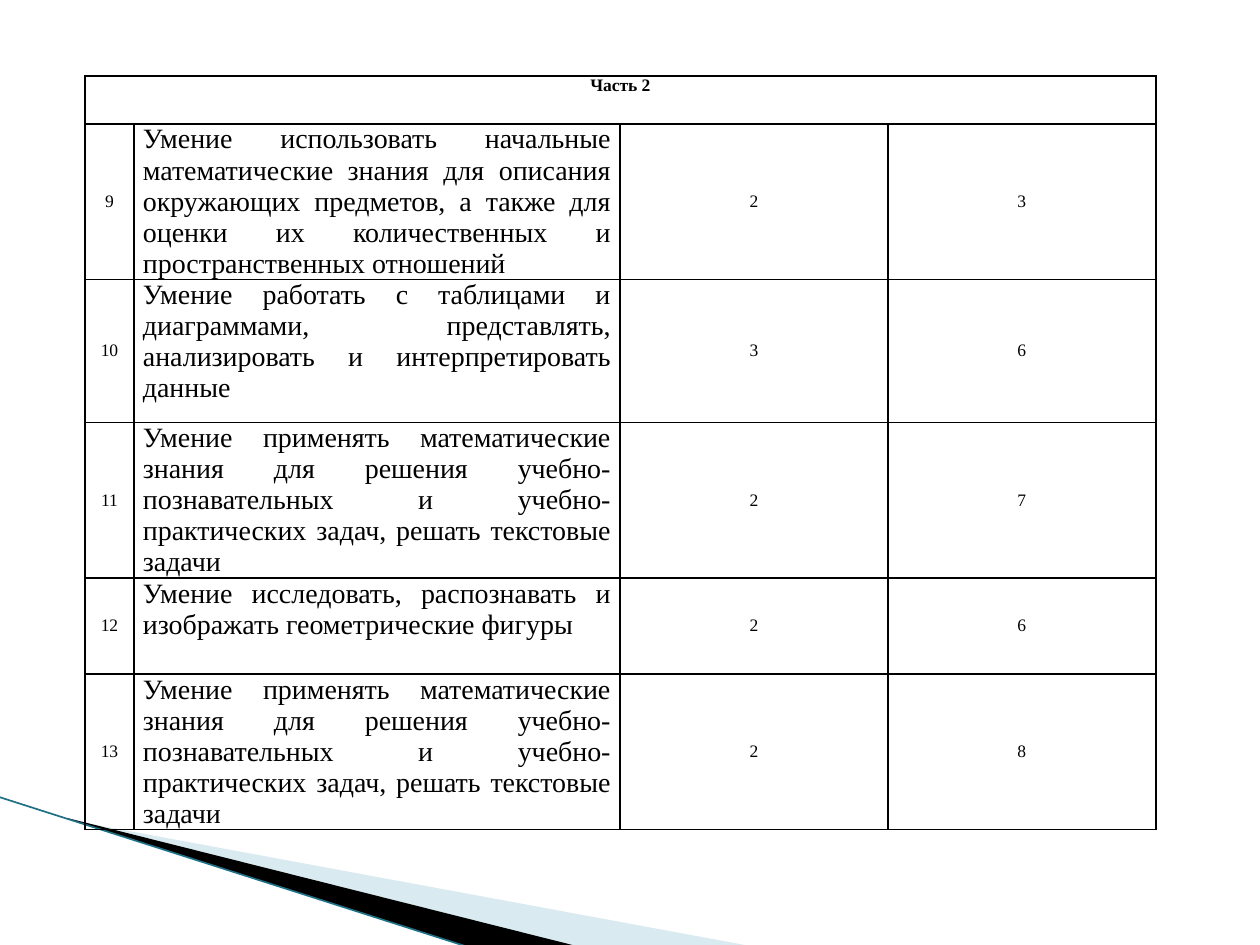
from dataclasses import dataclass

from lxml import etree
from pptx import Presentation
from pptx import util as u
from pptx.dml.color import RGBColor
from pptx.enum import shapes, text
from pptx.oxml.ns import qn


@dataclass(frozen=True)
class Theme:
    font: str = "Times New Roman"
    ink: str = "000000"
    pale: str = "A0CBDC"
    accent: str = "1F7085"
    small: int = 10
    body: int = 16


theme = Theme()
PX = u.Inches(1) // 126


def fill_cell(cell, words, size, align, anchor, bold=False):
    cell.fill.background()
    cell.margin_left = cell.margin_right = 9 * PX
    cell.margin_top = cell.margin_bottom = 0
    cell.vertical_anchor = anchor
    para = cell.text_frame.paragraphs[0]
    para.alignment = align
    span = para.add_run()
    span.text = words
    span.font.name = theme.font
    span.font.size = u.Pt(size)
    span.font.bold = bold
    span.font.color.rgb = RGBColor.from_string(theme.ink)


def add_borders(cell):
    properties = cell._tc.get_or_add_tcPr()
    for position, side in enumerate(("lnL", "lnR", "lnT", "lnB")):
        border = etree.Element(qn(f"a:{side}"), w=str(u.Pt(1)))
        solid = etree.SubElement(border, qn("a:solidFill"))
        etree.SubElement(solid, qn("a:srgbClr"), val=theme.ink)
        properties.insert(position, border)


deck = Presentation()
deck.slide_width = 1260 * PX
deck.slide_height = 945 * PX
page = deck.slides.add_slide(deck.slide_layouts[6])

wedges = [
    (theme.pale, 40, [(69, 820), (750, 946), (575, 946), (69, 819)]),
    (theme.ink, 100, [(67, 818), (576, 946), (469, 947), (68, 819)]),
]
for color, opacity, points in wedges:
    builder = page.shapes.build_freeform(*points[0], scale=PX)
    builder.add_line_segments(points[1:], close=True)
    wedge = builder.convert_to_shape()
    wedge.shadow.inherit = False
    wedge.fill.solid()
    wedge.fill.fore_color.rgb = RGBColor.from_string(color)
    wedge.line.fill.background()
    if opacity < 100:
        tint = wedge._element.spPr.find(qn("a:solidFill")).find(qn("a:srgbClr"))
        etree.SubElement(tint, qn("a:alpha"), val=str(opacity * 1000))

edge = page.shapes.add_connector(
    shapes.MSO_CONNECTOR.STRAIGHT, -1 * PX, 797 * PX, 468 * PX, 947 * PX
)
edge.line.color.rgb = RGBColor.from_string(theme.accent)
edge.line.width = u.Pt(0.95)
etree.SubElement(edge._element.spPr, qn("a:effectLst"))

solving = (
    "Умение применять математические знания для решения учебно-познавательных "
    "и учебно-практических задач, решать текстовые задачи"
)
skills = [
    ("9", "Умение использовать начальные математические знания для описания "
     "окружающих предметов, а также для оценки их количественных и "
     "пространственных отношений", "2", "3"),
    ("10", "Умение работать с таблицами и диаграммами, представлять, "
     "анализировать и интерпретировать данные", "3", "6"),
    ("11", solving, "2", "7"),
    ("12", "Умение исследовать, распознавать и изображать геометрические фигуры",
     "2", "6"),
    ("13", solving, "2", "8"),
]
widths = [49, 486, 268, 268]
heights = [48, 155, 143, 155, 96, 155]

frame = page.shapes.add_table(
    len(heights), len(widths), 85 * PX, 76 * PX, sum(widths) * PX, sum(heights) * PX
)
table = frame.table
table.first_row = table.horz_banding = False
for column, width in zip(table.columns, widths):
    column.width = width * PX
for row, height in zip(table.rows, heights):
    row.height = height * PX

table.cell(0, 0).merge(table.cell(0, len(widths) - 1))
fill_cell(table.cell(0, 0), "Часть 2", theme.small,
          text.PP_ALIGN.CENTER, text.MSO_ANCHOR.TOP, bold=True)
for row_number, skill in enumerate(skills, 1):
    for column_number, words in enumerate(skill):
        cell = table.cell(row_number, column_number)
        if column_number == 1:
            fill_cell(cell, words, theme.body,
                      text.PP_ALIGN.JUSTIFY, text.MSO_ANCHOR.TOP)
        else:
            fill_cell(cell, words, theme.small,
                      text.PP_ALIGN.CENTER, text.MSO_ANCHOR.MIDDLE)
for cell in table.iter_cells():
    if cell.is_spanned:
        cell.fill.background()
    add_borders(cell)

deck.save("out.pptx")
